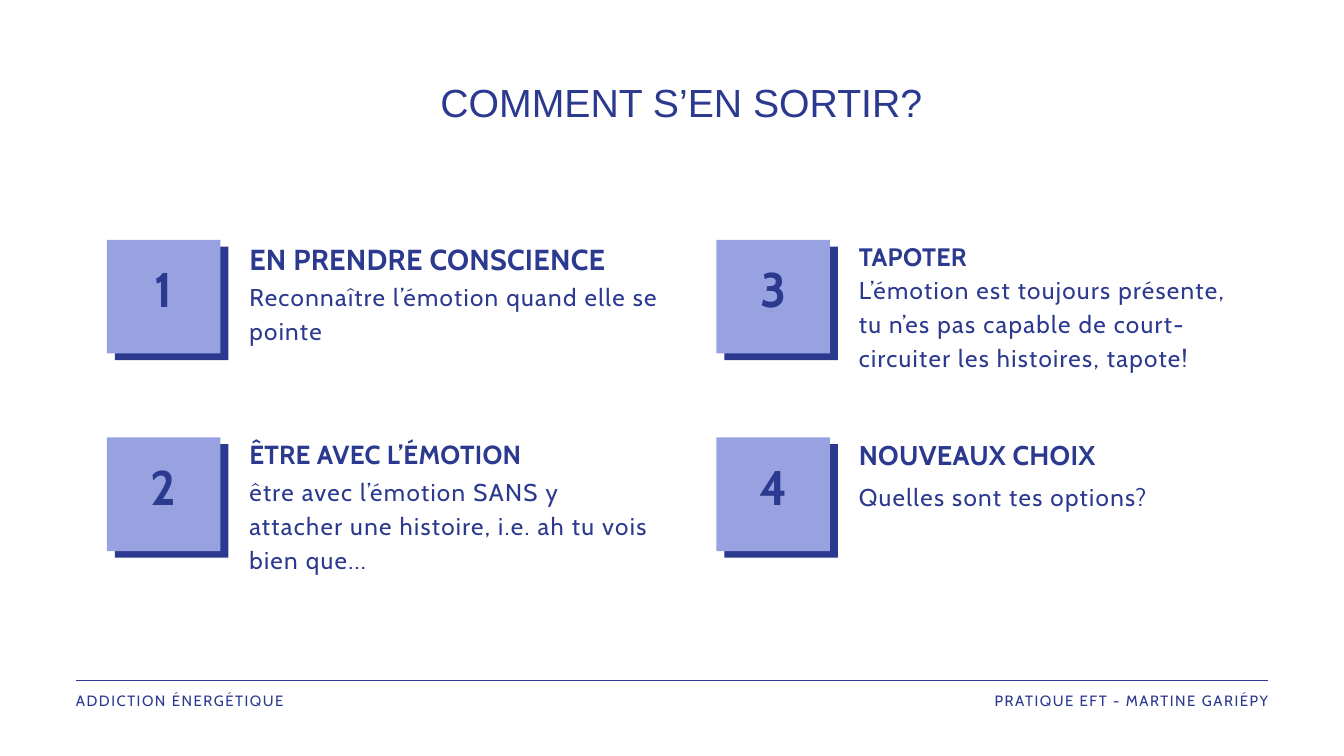
from dataclasses import dataclass
from typing import NamedTuple

from lxml.etree import SubElement
from pptx import Presentation
from pptx.dml.color import RGBColor
from pptx.enum.shapes import MSO_CONNECTOR as Connector, MSO_SHAPE as Shape
from pptx.enum.text import MSO_ANCHOR as Anchor, MSO_AUTO_SIZE as AutoSize, PP_ALIGN as Align
from pptx.oxml.ns import qn
from pptx.util import Inches, Pt

SLIDE_WIDTH, SLIDE_HEIGHT = 20, 11.25
COLORS = {"navy": "2B398E", "lavender": "98A2E1"}
LINE_SPACING = 1.4

# Grid of steps: two columns, two rows
GRID_LEFT, GRID_TOP = 1.59, 3.57
COLUMN_PITCH, ROW_PITCH = 9.07, 2.94
TILE = 1.69
SHADOW_X, SHADOW_Y = 0.12, 0.1
TEXT_OFFSET = 2.12
HEADING_RISE = 0.06
NUMBER_RISE = 0.39
MARGIN = 1.13


class Box(NamedTuple):
    left: float
    top: float
    width: float
    height: float

    def emu(self) -> list:
        return [Inches(length) for length in self]


@dataclass
class Style:
    size: float
    tracking: float = 0
    bold: bool = False
    font: str = "Cabin"
    align: Align = Align.LEFT
    inset: float = 0
    anchor: Anchor = Anchor.TOP
    fit: AutoSize = AutoSize.SHAPE_TO_FIT_TEXT


@dataclass
class Step:
    number: int
    column: int
    row: int
    heading: str
    heading_size: float
    body: str
    body_offset: float
    body_width: float
    body_height: float

    @property
    def left(self) -> float:
        return GRID_LEFT + self.column * COLUMN_PITCH

    @property
    def top(self) -> float:
        return GRID_TOP + self.row * ROW_PITCH


STEPS = [
    Step(1, 0, 0, "EN PRENDRE CONSCIENCE", 31,
         "Reconnaître l’émotion quand elle se pointe", 0.56, 6.1, 0.99),
    Step(2, 0, 1, "ÊTRE AVEC L’ÉMOTION", 28,
         "être avec l’émotion SANS y attacher une histoire, i.e. ah tu vois bien que...",
         0.52, 6.1, 1.49),
    Step(3, 1, 0, "TAPOTER", 27,
         "L’émotion est toujours présente, tu n’es pas capable de court-circuiter "
         "les histoires, tapote!", 0.45, 5.72, 1.99),
    Step(4, 1, 1, "NOUVEAUX CHOIX", 29, "Quelles sont tes options?", 0.59, 6.1, 0.49),
]

TITLE = Style(42, font="Arial", align=Align.CENTER)
NUMBER = Style(52, 5.3, True, align=Align.CENTER, inset=0.06,
               anchor=Anchor.MIDDLE, fit=AutoSize.NONE)
BODY = Style(26, 1.43)
FOOTER_LEFT = Style(16, 1.64)
FOOTER_RIGHT = Style(16, 1.64, align=Align.RIGHT)


def color(name: str) -> RGBColor:
    return RGBColor.from_string(COLORS[name])


def add_square(slide, left: float, top: float, fill: str) -> None:
    shape = slide.shapes.add_shape(Shape.RECTANGLE, *Box(left, top, TILE, TILE).emu())
    shape.shadow.inherit = False
    shape.fill.solid()
    shape.fill.fore_color.rgb = color(fill)
    shape.line.fill.background()


def add_text(slide, text: str, box: Box, style: Style) -> None:
    frame = slide.shapes.add_textbox(*box.emu()).text_frame
    frame_format = {"word_wrap": True, "auto_size": style.fit, "vertical_anchor": style.anchor}
    for side in ("left", "top", "right", "bottom"):
        frame_format[f"margin_{side}"] = Inches(style.inset)
    for name, value in frame_format.items():
        setattr(frame, name, value)

    paragraph = frame.paragraphs[0]
    paragraph.alignment = style.align
    paragraph.line_spacing = Pt(style.size * LINE_SPACING)
    run = paragraph.add_run()
    run.text = text
    for name, value in {"name": style.font, "size": Pt(style.size), "bold": style.bold}.items():
        setattr(run.font, name, value)
    run.font.color.rgb = color("navy")
    if style.tracking:
        run._r.get_or_add_rPr().set("spc", str(round(style.tracking * 100)))


def add_rule(slide, top: float) -> None:
    ends = Box(MARGIN, top, SLIDE_WIDTH - MARGIN, top)
    rule = slide.shapes.add_connector(Connector.STRAIGHT, *ends.emu())
    rule.line.color.rgb = color("navy")
    rule.line.width = Pt(0.75)
    SubElement(rule._element.spPr, qn("a:effectLst"))


def add_step(slide, step: Step) -> None:
    # Numbered tile over its offset shadow
    add_square(slide, step.left + SHADOW_X, step.top + SHADOW_Y, "navy")
    add_square(slide, step.left, step.top, "lavender")
    add_text(slide, str(step.number),
             Box(step.left, step.top - NUMBER_RISE, TILE, TILE + NUMBER_RISE), NUMBER)

    # Heading and explanation
    text_left = step.left + TEXT_OFFSET
    add_text(slide, step.heading, Box(text_left, step.top - HEADING_RISE, 6.1, 0.54),
             Style(step.heading_size, 0.3, True))
    add_text(slide, step.body, Box(text_left, step.top + step.body_offset,
                                   step.body_width, step.body_height), BODY)


def main() -> None:
    presentation = Presentation()
    presentation.slide_width = Inches(SLIDE_WIDTH)
    presentation.slide_height = Inches(SLIDE_HEIGHT)
    slide = presentation.slides.add_slide(presentation.slide_layouts[6])

    # Title and steps
    add_text(slide, "COMMENT S’EN SORTIR?", Box(1.4, 1.05, 17.48, 0.78), TITLE)
    for step in STEPS:
        add_step(slide, step)

    # Footer
    add_rule(slide, 10.12)
    add_text(slide, "ADDICTION ÉNERGÉTIQUE", Box(MARGIN, 10.24, 8.48, 0.29), FOOTER_LEFT)
    add_text(slide, "PRATIQUE EFT - MARTINE GARIÉPY", Box(13.94, 10.24, 4.94, 0.29), FOOTER_RIGHT)

    presentation.save("out.pptx")


if __name__ == "__main__":
    main()
